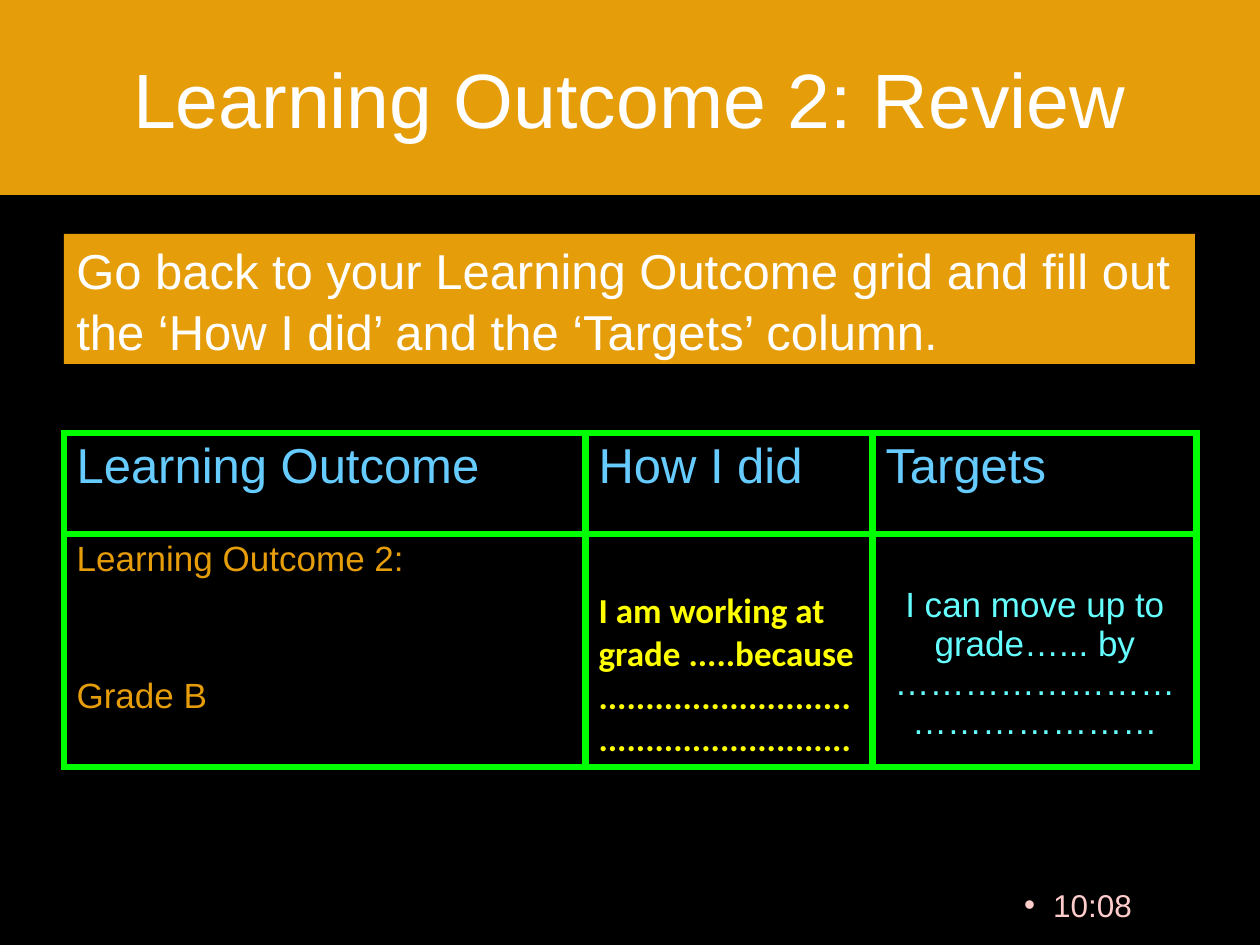
from dataclasses import dataclass

from lxml.etree import SubElement
from pptx import Presentation
from pptx.dml.color import RGBColor
from pptx.enum.shapes import MSO_SHAPE
from pptx.enum.text import MSO_ANCHOR, PP_ALIGN
from pptx.oxml.ns import qn
from pptx.slide import Slide
from pptx.util import Emu, Pt

BLACK = RGBColor(0x00, 0x00, 0x00)
WHITE = RGBColor(0xFF, 0xFF, 0xFF)
AMBER = RGBColor(0xE6, 0x9D, 0x0A)
SKY = RGBColor(0x66, 0xCC, 0xFF)
AQUA = RGBColor(0x66, 0xFF, 0xFF)
YELLOW = RGBColor(0xFF, 0xFF, 0x00)
PINK = RGBColor(0xFF, 0xCC, 0xCC)
GREEN = RGBColor(0x00, 0xFF, 0x00)

LEFT, CENTER = PP_ALIGN.LEFT, PP_ALIGN.CENTER
COLS = (522, 287, 324)
ROWS = (101, 233)


def px(n: int) -> Emu:
    return Emu(round(n * 914400 / 126))


@dataclass
class Style:
    size: int
    color: RGBColor
    align: PP_ALIGN = LEFT
    font: str = "Arial"
    bold: bool = False


@dataclass
class Panel:
    text: str
    box: tuple[int, int, int, int]
    style: Style
    lead: float = 1.0


@dataclass
class Entry:
    text: str
    style: Style
    top: int = 6
    gap: int = 0


HEAD = Style(28, SKY)
PANELS = (
    Panel("Learning Outcome 2: Review", (0, 0, 1260, 195), Style(44, WHITE, CENTER)),
    Panel(
        "Go back to your Learning Outcome grid and fill out "
        "the ‘How I did’ and the ‘Targets’ column.",
        (64, 234, 1131, 130), Style(28, WHITE), 1.05,
    ),
)
GRID = (
    (Entry("Learning Outcome", HEAD), Entry("How I did", HEAD), Entry("Targets", HEAD)),
    (
        Entry("Learning Outcome 2:\nGrade B", Style(20, AMBER), gap=56),
        Entry(
            "I am working at grade .....because " + "." * 54,
            Style(20, YELLOW, font="Calibri", bold=True), top=56,
        ),
        Entry("I can move up to grade…... by " + "…" * 15, Style(20, AQUA, CENTER), top=52),
    ),
)


def write(frame, text: str, style: Style) -> None:
    frame.text = text
    frame.word_wrap = True
    for para in frame.paragraphs:
        para.alignment = style.align
        for run in para.runs:
            font = run.font
            font.name, font.size, font.bold = style.font, Pt(style.size), style.bold
            font.color.rgb = style.color


def draw_panel(slide: Slide, panel: Panel) -> None:
    shape = slide.shapes.add_shape(MSO_SHAPE.RECTANGLE, *map(px, panel.box))
    shape.shadow.inherit = False
    shape.fill.solid()
    shape.fill.fore_color.rgb = AMBER
    shape.line.fill.background()
    frame = shape.text_frame
    frame.vertical_anchor = MSO_ANCHOR.MIDDLE
    write(frame, panel.text, panel.style)
    frame.paragraphs[0].line_spacing = panel.lead


def add_border(cell) -> None:
    props = cell._tc.get_or_add_tcPr()
    for spot, side in enumerate(("lnL", "lnR", "lnT", "lnB")):
        line = SubElement(props, qn(f"a:{side}"), w=str(Pt(4.5)))
        fill = SubElement(line, qn("a:solidFill"))
        SubElement(fill, qn("a:srgbClr"), val=str(GREEN))
        props.insert(spot, line)


def draw_grid(slide: Slide) -> None:
    box = map(px, (64, 433, sum(COLS), sum(ROWS)))
    table = slide.shapes.add_table(len(ROWS), len(COLS), *box).table
    for col, width in zip(table.columns, COLS):
        col.width = px(width)
    for row, height, entries in zip(table.rows, ROWS, GRID):
        row.height = px(height)
        for cell, entry in zip(row.cells, entries):
            cell.fill.solid()
            cell.fill.fore_color.rgb = BLACK
            cell.margin_top = px(entry.top)
            write(cell.text_frame, entry.text, entry.style)
            for para in cell.text_frame.paragraphs[1:]:
                para.space_before = Pt(entry.gap)
            add_border(cell)


def draw_clock(slide: Slide) -> None:
    frame = slide.shapes.add_textbox(*map(px, (988, 880, 198, 65))).text_frame
    write(frame, "10:08", Style(18, PINK, CENTER))
    props = frame.paragraphs[0]._p.get_or_add_pPr()
    props.set("marL", str(px(10)))
    props.set("indent", str(px(-29)))
    SubElement(props, qn("a:buFont"), typeface="Arial")
    SubElement(props, qn("a:buChar"), char="•")


def main() -> None:
    deck = Presentation()
    deck.slide_width, deck.slide_height = px(1260), px(945)
    slide = deck.slides.add_slide(deck.slide_layouts[6])
    slide.background.fill.solid()
    slide.background.fill.fore_color.rgb = BLACK
    draw_clock(slide)
    for panel in PANELS:
        draw_panel(slide, panel)
    draw_grid(slide)
    deck.save("out.pptx")


if __name__ == "__main__":
    main()
